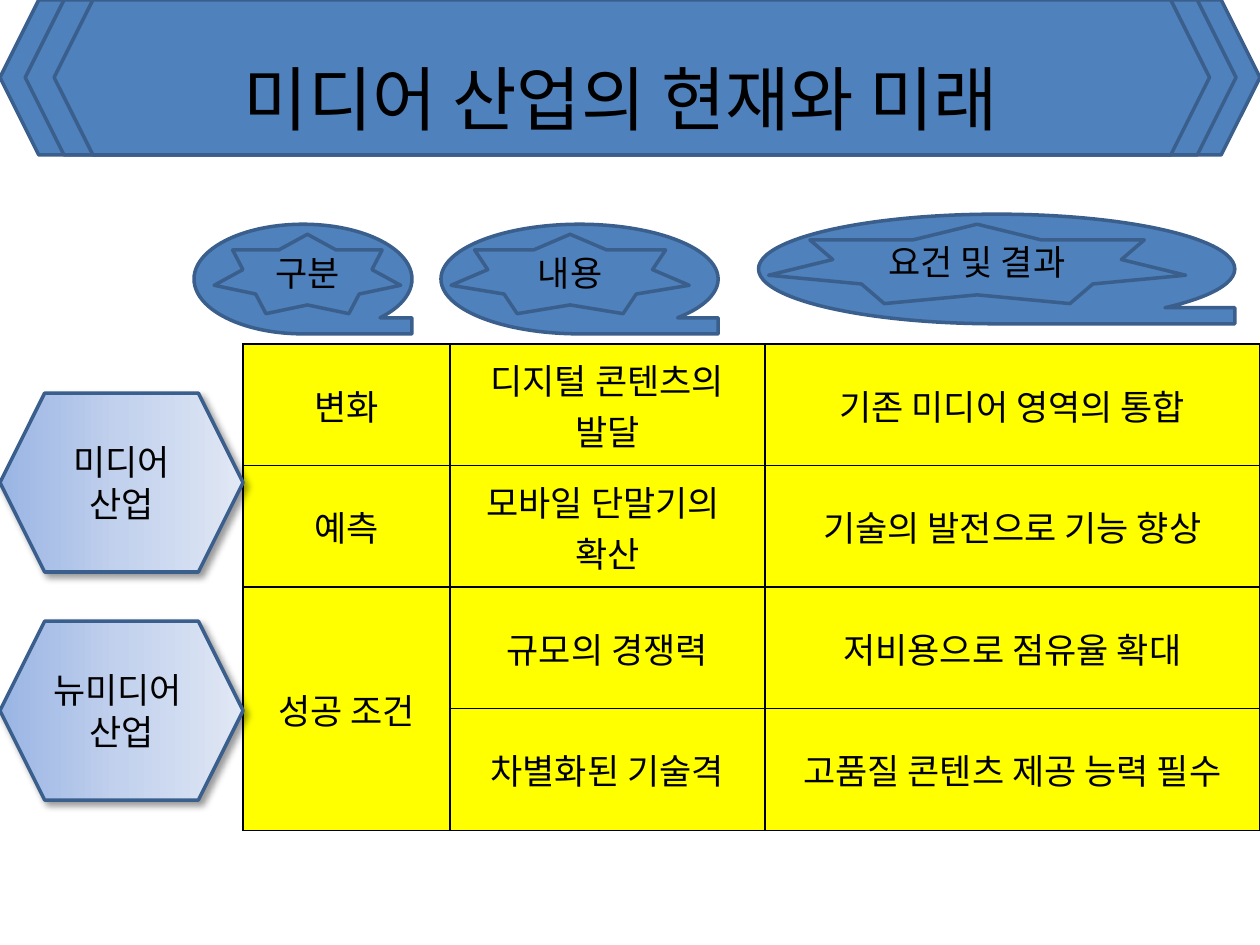
from copy import deepcopy

from pptx import Presentation
from pptx.dml.color import RGBColor
from pptx.enum.shapes import MSO_SHAPE
from pptx.enum.text import MSO_ANCHOR, PP_ALIGN
from pptx.oxml import parse_xml
from pptx.oxml.ns import nsdecls, qn
from pptx.util import Inches, Pt

FONT = "Noto Sans CJK KR"
BLACK = RGBColor(0x00, 0x00, 0x00)
BLUE = RGBColor(0x4F, 0x81, 0xBD)
OUTLINE = RGBColor(0x3A, 0x5F, 0x8C)
YELLOW = RGBColor(0xFF, 0xFF, 0x00)
GRADIENT = [
    (0, RGBColor(0x9A, 0xB5, 0xE4)),
    (0.5, RGBColor(0xC2, 0xD1, 0xED)),
    (1, RGBColor(0xE1, 0xE8, 0xF5)),
]


def write_text(tf, text, size=20, color=BLACK, spacing=None):
    """Write centred text, one paragraph per line."""
    for i, line in enumerate(text.split("\n")):
        p = tf.paragraphs[0] if i == 0 else tf.add_paragraph()
        p.alignment = PP_ALIGN.CENTER
        if spacing:
            p.line_spacing = Pt(spacing)
        r = p.add_run()
        r.text = line
        r.font.size = Pt(size)
        r.font.name = FONT
        r.font.color.rgb = color
        r._r.get_or_add_rPr().append(
            parse_xml(f'<a:ea {nsdecls("a")} typeface="{FONT}"/>'))


def add_outlined(slide, kind, x, y, w, h):
    sp = slide.shapes.add_shape(kind, Inches(x), Inches(y), Inches(w), Inches(h))
    sp.shadow.inherit = False
    sp.fill.solid()
    sp.fill.fore_color.rgb = BLUE
    sp.line.color.rgb = OUTLINE
    sp.line.width = Pt(2)
    tf = sp.text_frame
    tf.vertical_anchor = MSO_ANCHOR.MIDDLE
    tf.margin_left = tf.margin_right = tf.margin_top = tf.margin_bottom = 0
    tf.word_wrap = False
    return sp


def add_banner(slide, x, y, w, h, title):
    # Nested hexagons, from the widest to the narrowest
    for left, right in ((0, 0), (0.2, 0.19), (0.43, 0.4)):
        add_outlined(slide, MSO_SHAPE.HEXAGON, x + left, y, w - left - right, h)
    # Title
    tb = slide.shapes.add_textbox(
        Inches(x + 0.43), Inches(y), Inches(w - 1), Inches(1.55))
    tf = tb.text_frame
    tf.word_wrap = True
    tf.vertical_anchor = MSO_ANCHOR.MIDDLE
    write_text(tf, title, size=40)


def add_column_header(slide, x, y, w, h, text, star_left, star_width):
    """A tape shape with a labelled star inside it."""
    add_outlined(slide, MSO_SHAPE.FLOWCHART_SEQUENTIAL_ACCESS_STORAGE, x, y, w, h)
    star = add_outlined(slide, MSO_SHAPE.STAR_7_POINT,
                        x + star_left, y + 0.08, star_width, 0.63)
    write_text(star.text_frame, text)


def add_side_label(slide, x, y, w, h, text):
    sp = add_outlined(slide, MSO_SHAPE.HEXAGON, x, y, w, h)
    # Three-stop gradient
    sp.fill.gradient()
    sp.fill.gradient_angle = 0
    gs_list = sp._element.spPr.find(qn("a:gradFill")).find(qn("a:gsLst"))
    gs_list.append(deepcopy(gs_list[0]))
    for stop, (position, color) in zip(sp.fill.gradient_stops, GRADIENT):
        stop.position = position
        stop.color.rgb = color
    # Soft shadow
    sp._element.spPr.find(qn("a:effectLst")).append(parse_xml(
        f'<a:outerShdw {nsdecls("a")} blurRad="{Pt(4)}" dist="{Pt(3)}" '
        'dir="2700000" algn="tl" rotWithShape="0"><a:srgbClr val="000000">'
        '<a:alpha val="40000"/></a:srgbClr></a:outerShdw>'))
    write_text(sp.text_frame, text, spacing=24)


def style_cell(cell):
    tc_pr = cell._tc.get_or_add_tcPr()
    for side in ("lnL", "lnR", "lnT", "lnB"):
        tc_pr.append(parse_xml(
            f'<a:{side} {nsdecls("a")} w="{Pt(1)}"><a:solidFill>'
            f'<a:srgbClr val="{BLACK}"/></a:solidFill></a:{side}>'))
    cell.fill.solid()
    cell.fill.fore_color.rgb = YELLOW
    cell.vertical_anchor = MSO_ANCHOR.MIDDLE


def add_industry_table(slide, x, y, w, h, rows):
    table = slide.shapes.add_table(
        len(rows), 3, Inches(x), Inches(y), Inches(w), Inches(h)).table
    table.first_row = table.horz_banding = False
    for column, width in zip(table.columns, (1.64, 2.5, w - 4.14)):
        column.width = Inches(width)
    for r, texts in enumerate(rows):
        for c, text in enumerate(texts):
            cell = table.cell(r, c)
            style_cell(cell)
            if text:
                write_text(cell.text_frame, text)
    # The success condition covers the last two rows
    table.cell(2, 0).merge(table.cell(3, 0))


def main():
    prs = Presentation()
    prs.slide_width, prs.slide_height = Inches(10), Inches(7.5)
    slide = prs.slides.add_slide(prs.slide_layouts[6])

    add_banner(slide, 0, 0, 10, 1.23, "미디어 산업의 현재와 미래")
    add_industry_table(slide, 1.93, 2.73, 8.07, 3.86, [
        ("변화", "디지털 콘텐츠의\n발달", "기존 미디어 영역의 통합"),
        ("예측", "모바일 단말기의 \n확산", "기술의 발전으로 기능 향상"),
        ("성공 조건", "규모의 경쟁력", "저비용으로 점유율 확대"),
        ("", "차별화된 기술격", "고품질 콘텐츠 제공 능력 필수"),
    ])
    for x, y, w, text, star_left, star_width in (
        (1.54, 1.78, 1.73, "구분", 0.16, 1.48),
        (3.5, 1.78, 2.2, "내용", 0.08, 1.89),
        (6.02, 1.7, 3.78, "요건 및 결과", 0.08, 3.31),
    ):
        add_column_header(slide, x, y, w, 0.87, text, star_left, star_width)
    for y, text in ((3.12, "미디어\n산업"), (4.93, "뉴미디어 \n산업")):
        add_side_label(slide, 0, y, 1.93, 1.42, text)

    prs.save("out.pptx")


if __name__ == "__main__":
    main()
